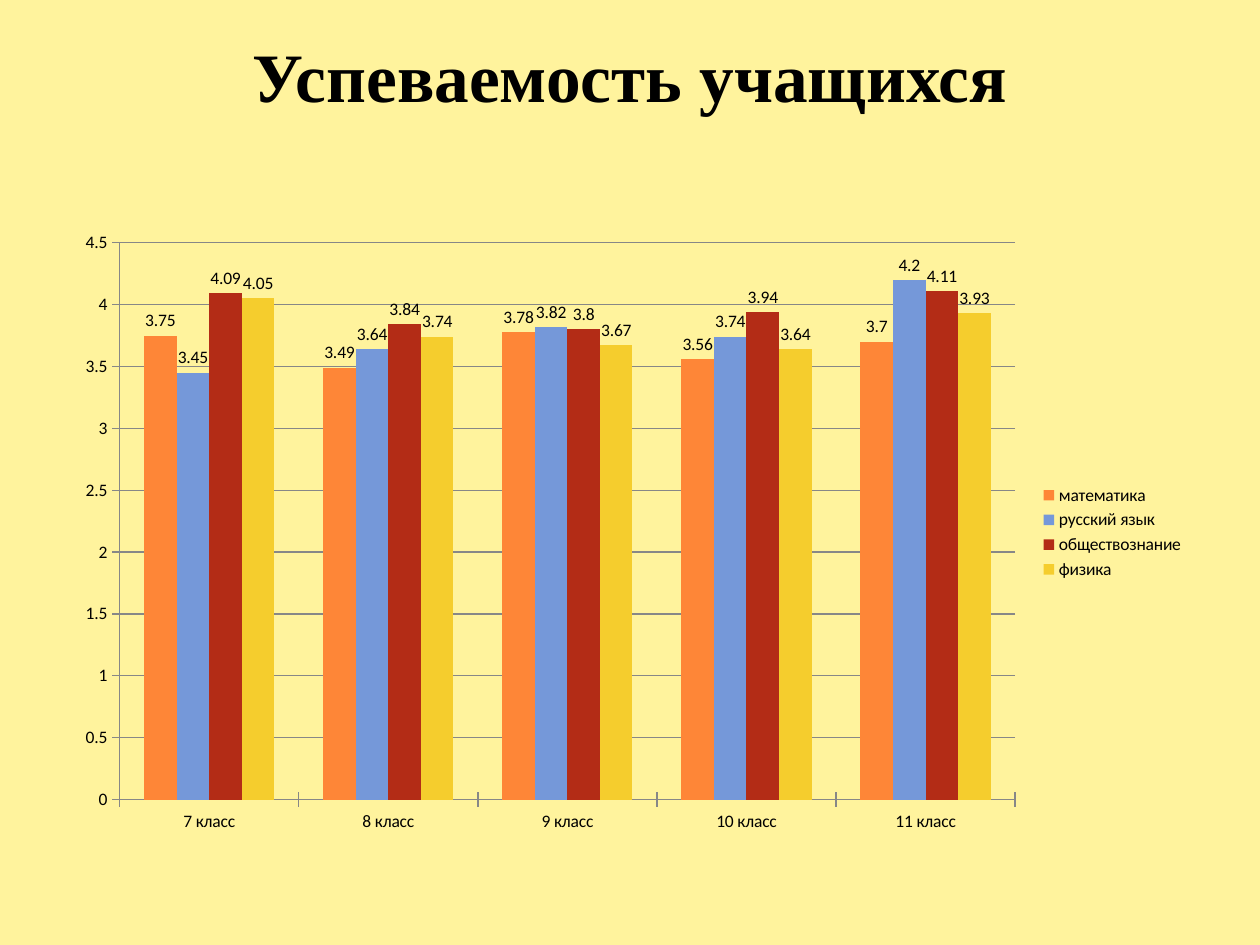
"""Build a slide with a column chart of pupils' grades by class and subject."""
from pptx import Presentation
from pptx.chart.data import CategoryChartData
from pptx.dml.color import RGBColor
from pptx.enum.chart import XL_CHART_TYPE, XL_LABEL_POSITION, XL_LEGEND_POSITION, XL_TICK_MARK
from pptx.enum.text import MSO_ANCHOR, PP_ALIGN
from pptx.util import Inches, Pt

COLUMNS = XL_CHART_TYPE.COLUMN_CLUSTERED
ABOVE_BAR = XL_LABEL_POSITION.OUTSIDE_END
LEGEND_RIGHT = XL_LEGEND_POSITION.RIGHT
CROSS = XL_TICK_MARK.CROSS
MIDDLE = MSO_ANCHOR.MIDDLE
CENTER = PP_ALIGN.CENTER

BACKGROUND = RGBColor(0xFF, 0xF3, 0x9D)
BLACK = RGBColor(0, 0, 0)
GREY = RGBColor(0x87, 0x87, 0x87)

HEADING = "Успеваемость учащихся"
CLASSES = ["7 класс", "8 класс", "9 класс", "10 класс", "11 класс"]
SUBJECTS = [
    ("математика", [3.75, 3.49, 3.78, 3.56, 3.7], RGBColor(0xFE, 0x86, 0x37)),
    ("русский язык", [3.45, 3.64, 3.82, 3.74, 4.2], RGBColor(0x75, 0x98, 0xD9)),
    ("обществознание", [4.09, 3.84, 3.8, 3.94, 4.11], RGBColor(0xB3, 0x2C, 0x16)),
    ("физика", [4.05, 3.74, 3.67, 3.64, 3.93], RGBColor(0xF5, 0xCD, 0x2D)),
]


def add_heading(slide):
    heading = slide.shapes.title
    heading.left, heading.top = Inches(0.5), Inches(0.3)
    heading.width, heading.height = Inches(9), Inches(1.25)
    frame = heading.text_frame
    frame.vertical_anchor = MIDDLE
    frame.word_wrap = True
    line = frame.paragraphs[0]
    line.text = HEADING
    line.add_line_break()
    line.alignment = CENTER
    line.font.name = "Times New Roman"
    line.font.size = Pt(39.6)
    line.font.bold = True
    line.font.color.rgb = BLACK


def add_grades(slide):
    grades = CategoryChartData()
    grades.categories = CLASSES
    for subject, marks, _ in SUBJECTS:
        grades.add_series(subject, marks)
    chart = slide.shapes.add_chart(
        COLUMNS, Inches(0.5), Inches(1.75), Inches(9), Inches(4.95), grades
    ).chart
    chart.has_title = False
    chart.font.name = "Calibri"
    chart.font.size = Pt(10)
    chart.font.color.rgb = BLACK

    chart.has_legend = True
    chart.legend.position = LEGEND_RIGHT
    chart.legend.include_in_layout = False

    for axis in (chart.category_axis, chart.value_axis):
        axis.major_tick_mark = CROSS
        axis.format.line.color.rgb = GREY
    chart.value_axis.has_major_gridlines = True
    chart.value_axis.major_gridlines.format.line.color.rgb = GREY

    plot = chart.plots[0]
    plot.gap_width = 150
    plot.vary_by_categories = False
    for series, (_, _, color) in zip(plot.series, SUBJECTS):
        series.format.fill.solid()
        series.format.fill.fore_color.rgb = color
        series.data_labels.show_value = True
        series.data_labels.position = ABOVE_BAR


def main():
    deck = Presentation()
    deck.slide_width, deck.slide_height = Inches(10), Inches(7.5)
    slide = deck.slides.add_slide(deck.slide_layouts[5])
    slide.background.fill.solid()
    slide.background.fill.fore_color.rgb = BACKGROUND
    add_heading(slide)
    add_grades(slide)
    deck.save("out.pptx")


if __name__ == "__main__":
    main()
